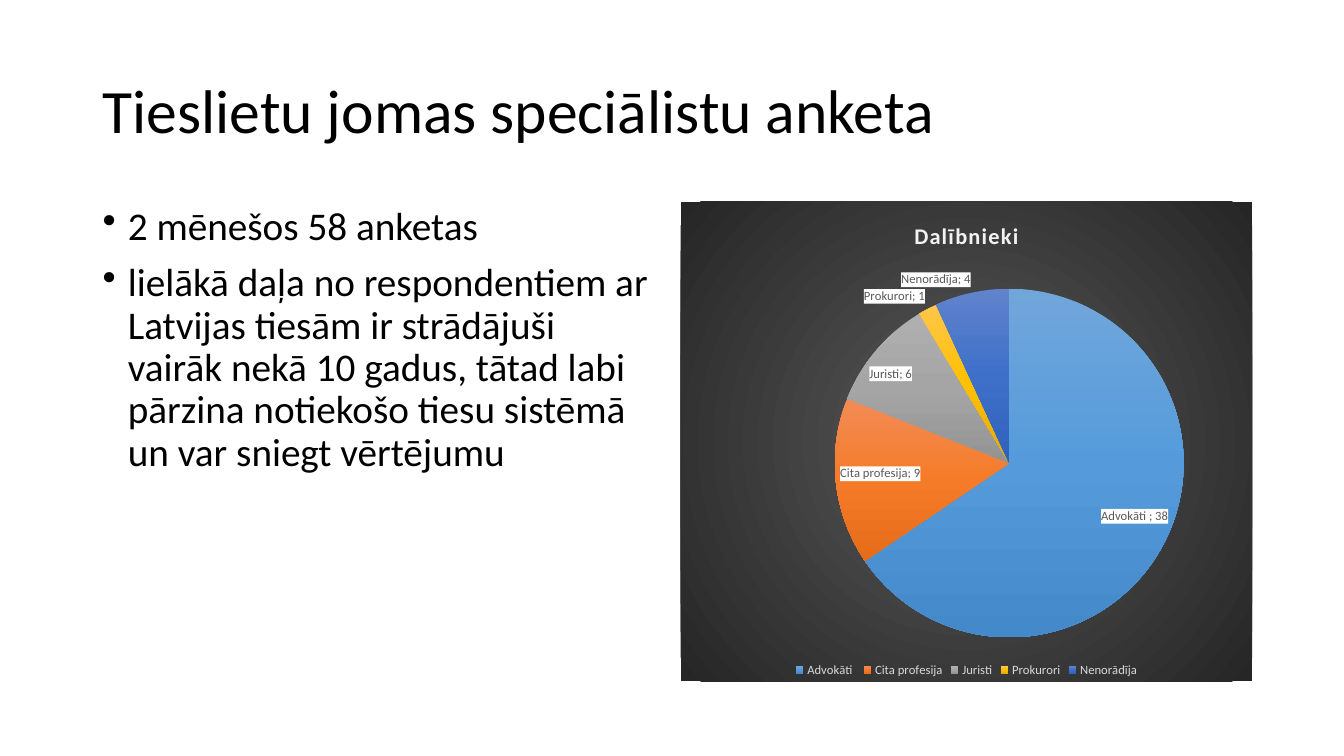
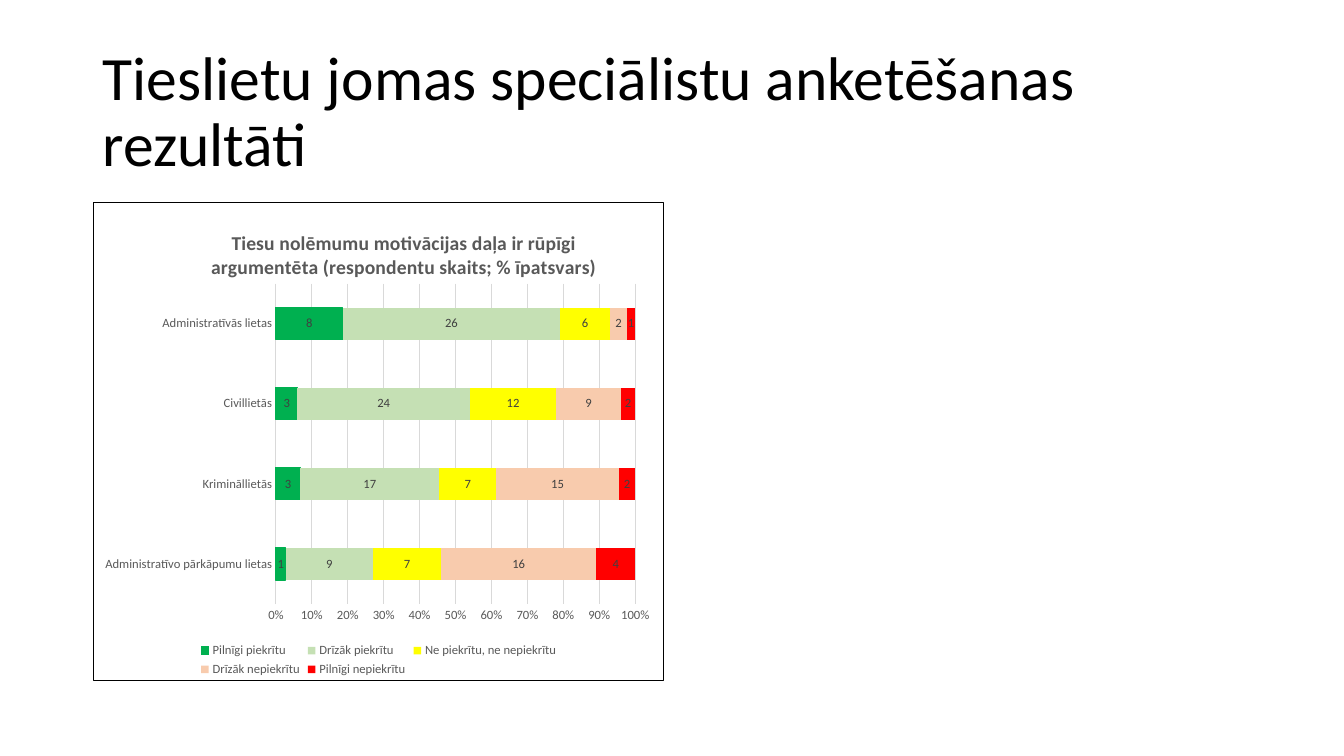
from dataclasses import dataclass

from lxml.etree import SubElement as Sub
from pptx import Presentation
from pptx.chart.data import CategoryChartData as Data
from pptx.dml.color import RGBColor as Rgb
from pptx.enum.chart import XL_CHART_TYPE as Kind
from pptx.enum.chart import XL_LABEL_POSITION as Spot
from pptx.enum.chart import XL_LEGEND_POSITION as Side
from pptx.enum.chart import XL_TICK_MARK as Tick
from pptx.enum.text import MSO_ANCHOR as Anchor
from pptx.oxml import parse_xml
from pptx.oxml.ns import nsdecls, qn
from pptx.util import Inches, Pt


@dataclass(frozen=True)
class Theme:
    """Colours and type sizes of the deck."""
    face: str = "Calibri"
    ink: str = "000000"
    paper: str = "FFFFFF"
    gray: str = "595959"
    dark: str = "404040"
    rule: str = "D9D9D9"
    light: str = "F2F2F2"
    night: tuple = ("595959", "262626")
    head: int = 44
    body: int = 28
    top: int = 16
    sub: int = 14
    base: int = 10
    small: int = 9


T = Theme()
HEAD = (0.92, 0.4, 11.5, 1.45)
LEFT = (0.92, 2, 5.67, 4.76)
RIGHT = (6.75, 2, 5.67, 4.76)

GROUPS = (
    ("Advokāti ", 38, ("71A6DB", "559BDB", "448ACA")),
    ("Cita profesija", 9, ("F18C57", "F67B28", "E56C19")),
    ("Juristi", 6, ("AFAFAF", "A5A5A5", "939393")),
    ("Prokurori", 1, ("FFC64B", "FFC000", "E3AB00")),
    ("Nenorādīja", 4, ("6183CB", "3E70CA", "3062BB")),
)
CASES = ("Administratīvo pārkāpumu lietas", "Krimināllietās",
         "Civillietās", "Administratīvās lietas")
VIEWS = (
    ("Pilnīgi piekrītu", (1, 3, 3, 8), "00B050"),
    ("Drīzāk piekrītu", (9, 17, 24, 26), "C5E0B4"),
    ("Ne piekrītu, ne nepiekrītu", (7, 7, 12, 6), "FFFF00"),
    ("Drīzāk nepiekrītu", (16, 15, 9, 2), "F8CBAD"),
    ("Pilnīgi nepiekrītu", (4, 2, 2, 1), "FF0000"),
)
POINTS = (
    "2 mēnešos 58 anketas",
    "lielākā daļa no respondentiem ar Latvijas tiesām ir strādājuši vairāk "
    "nekā 10 gadus, tātad labi pārzina notiekošo tiesu sistēmā un var sniegt "
    "vērtējumu",
)


def style(font, size, color, bold=False):
    """Set the face, size, colour and weight of a font."""
    font.name, font.size, font.bold = T.face, Pt(size), bold
    font.color.rgb = Rgb.from_string(color)


def text(slide, box, lines, size, anchor=Anchor.TOP, dots=False):
    """Write paragraphs into a box, bulleted on request."""
    frame = slide.shapes.add_textbox(*map(Inches, box)).text_frame
    frame.word_wrap, frame.vertical_anchor = True, anchor
    for n, line in enumerate(lines):
        para = frame.add_paragraph() if n else frame.paragraphs[0]
        para.text, para.line_spacing = line, 0.9
        style(para.font, size, T.ink)
        if dots:
            para.space_before = Pt(10)
            props = para._p.get_or_add_pPr()
            props.set("marL", str(Inches(0.25)))
            props.set("indent", str(Inches(-0.25)))
            mark = parse_xml(f'<a:buChar {nsdecls("a")} char="•"/>')
            props.find(qn("a:defRPr")).addprevious(mark)


def solid(color):
    """Return a plain fill."""
    return (f'<a:solidFill {nsdecls("a")}><a:srgbClr val="{color}"/>'
            '</a:solidFill>')


def blend(colors, way):
    """Return a gradient fill with evenly spaced stops."""
    step = 100000 // (len(colors) - 1)
    stops = "".join(f'<a:gs pos="{n * step}"><a:srgbClr val="{c}"/></a:gs>'
                    for n, c in enumerate(colors))
    return (f'<a:gradFill {nsdecls("a")} rotWithShape="1">'
            f'<a:gsLst>{stops}</a:gsLst>{way}</a:gradFill>')


def skin(fill, edge=""):
    """Return chart shape properties with a fill and an outline."""
    line = f'<a:ln w="{Pt(1)}">{edge or "<a:noFill/>"}</a:ln>'
    return parse_xml(f'<c:spPr {nsdecls("c", "a")}>{fill}{line}</c:spPr>')


def place(node, at, spot, inner=False):
    """Give a chart part a manual layout in fractions of the chart."""
    for old in node.findall(qn("c:layout")):
        node.remove(old)
    area = node.makeelement(qn("c:layout"))
    plan = Sub(area, qn("c:manualLayout"))
    if inner:
        Sub(plan, qn("c:layoutTarget")).set("val", "inner")
    for axis in "xy":
        Sub(plan, qn(f"c:{axis}Mode")).set("val", "edge")
    for key, part in zip("xywh", spot):
        Sub(plan, qn(f"c:{key}")).set("val", str(part))
    node.insert(at, area)


def graph(slide, box, kind, data, title, size, tint, key, plot, fill):
    """Add a chart with its title, legend, plot place and ground."""
    chart = slide.shapes.add_chart(kind, *map(Inches, box), data).chart
    style(chart.font, T.base, T.ink)
    chart.has_title = True
    frame = chart.chart_title.text_frame
    frame.text = title
    style(frame.paragraphs[0].font, size, tint, True)
    chart.chart_title.include_in_layout = False
    chart.has_legend = True
    chart.legend.position = Side.BOTTOM
    chart.legend.include_in_layout = False
    style(chart.legend.font, T.small, key)
    root = chart.element
    place(root.find(".//" + qn("c:plotArea")), 0, plot, True)
    root.find(qn("c:chart")).addnext(fill)
    return chart


def pie(slide, box):
    """Add the pie of respondents by profession."""
    names, counts, ramps = zip(*GROUPS)
    data = Data()
    data.categories = names
    data.add_series("Series 1", counts)
    glow = ('<a:path path="circle"><a:fillToRect l="50000" t="50000" '
            'r="50000" b="50000"/></a:path>')
    chart = graph(slide, box, Kind.PIE, data, "Dalībnieki", T.top, T.light,
                  T.rule, (0.27, 0.18, 0.61, 0.73), skin(blend(T.night, glow)))
    chart.plots[0].vary_by_categories = True
    root = chart.element
    root.find(".//" + qn("c:title")).find(".//" + qn("a:defRPr")).set("spc", "100")
    row = chart.plots[0].series[0]
    for n, ramp in enumerate(ramps):
        row.points[n].format.fill.solid()
        old = root.findall(".//" + qn("c:dPt"))[n].find(qn("c:spPr"))
        old.getparent().replace(
            old, skin(blend(ramp, '<a:lin ang="5400000" scaled="0"/>')))
    tags = row.data_labels
    style(tags.font, T.small, T.gray)
    tags.show_value = tags.show_category_name = True
    tags.position = Spot.BEST_FIT
    node = root.find(".//" + qn("c:dLbls"))
    node.find(qn("c:txPr")).addprevious(skin(solid(T.paper)))
    gap = node.makeelement(qn("c:separator"))
    gap.text = "; "
    node.find(qn("c:showBubbleSize")).addnext(gap)


def bars(slide, box):
    """Add the stacked bars of views by kind of case."""
    data = Data()
    data.categories = CASES
    for name, counts, _ in VIEWS:
        data.add_series(name, counts)
    chart = graph(
        slide, box, Kind.BAR_STACKED_100, data,
        "Tiesu nolēmumu motivācijas daļa ir rūpīgi argumentēta "
        "(respondentu skaits; % īpatsvars)", T.sub, T.gray, T.gray,
        (0.32, 0.17, 0.63, 0.67), skin(solid(T.paper), solid(T.ink)))
    place(chart.element.find(".//" + qn("c:title")), 1, (0.2, 0.05))
    plot = chart.plots[0]
    plot.gap_width, plot.overlap = 150, 100
    plot.vary_by_categories = False
    for row, (_, _, color) in zip(plot.series, VIEWS):
        row.format.fill.solid()
        row.format.fill.fore_color.rgb = Rgb.from_string(color)
        row.data_labels.show_value = True
        style(row.data_labels.font, T.small, T.dark)
    edge = plot.series[0].format.line
    edge.color.rgb, edge.width = Rgb.from_string(VIEWS[0][2]), Pt(0.75)
    cat, val = chart.category_axis, chart.value_axis
    for axis in (cat, val):
        axis.major_tick_mark = axis.minor_tick_mark = Tick.NONE
        style(axis.tick_labels.font, T.small, T.gray)
    val.has_major_gridlines = True
    for line in (cat.format.line, val.major_gridlines.format.line):
        line.color.rgb, line.width = Rgb.from_string(T.rule), Pt(0.75)
    val.format.line.fill.background()
    val.tick_labels.number_format = "0%"
    val.tick_labels.number_format_is_linked = False


def page(deck, title):
    """Add a blank slide with the shared title."""
    slide = deck.slides.add_slide(deck.slide_layouts[6])
    text(slide, HEAD, (title,), T.head, Anchor.MIDDLE)
    return slide


def main():
    """Build and save the deck."""
    deck = Presentation()
    deck.slide_width, deck.slide_height = Inches(13.33), Inches(7.5)
    first = page(deck, "Tieslietu jomas speciālistu anketa")
    text(first, LEFT, POINTS, T.body, dots=True)
    pie(first, RIGHT)
    bars(page(deck, "Tieslietu jomas speciālistu anketēšanas rezultāti"), LEFT)
    deck.save("out.pptx")


if __name__ == "__main__":
    main()
